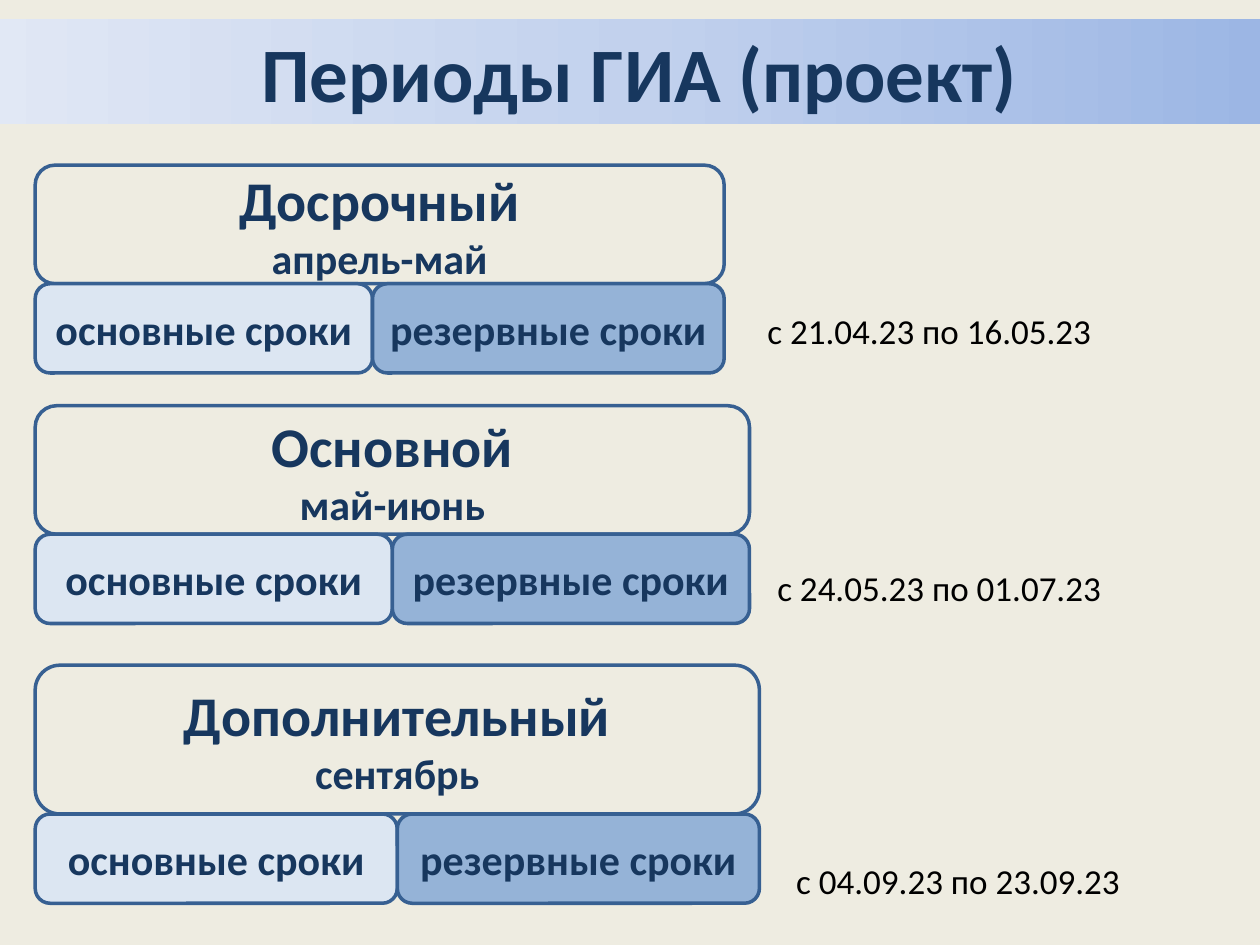
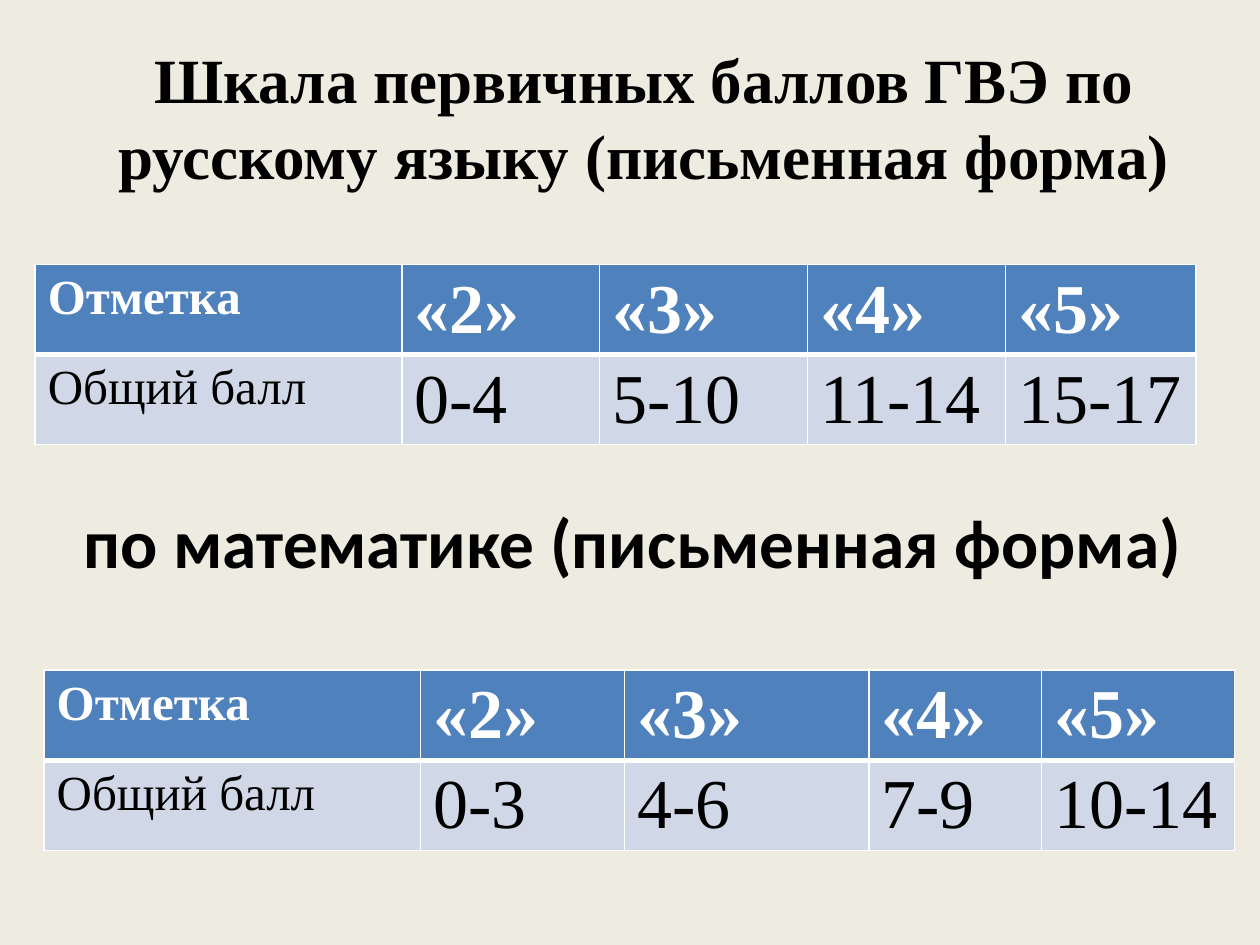
from copy import deepcopy

from lxml import etree
from pptx import Presentation
from pptx import util as u
from pptx.dml.color import RGBColor
from pptx.enum import shapes, text
from pptx.oxml.ns import qn

BACKGROUND = RGBColor(0xEE, 0xEC, 0xE1)
NAVY = RGBColor(0x17, 0x37, 0x5E)
OUTLINE = RGBColor(0x37, 0x60, 0x92)
PALE_BLUE = RGBColor(0xDC, 0xE6, 0xF2)
MID_BLUE = RGBColor(0x95, 0xB3, 0xD7)
HEADER_BLUE = RGBColor(0x4F, 0x81, 0xBD)
ROW_BLUE = RGBColor(0xD0, 0xD8, 0xE8)
WHITE = RGBColor(0xFF, 0xFF, 0xFF)
BLACK = RGBColor(0, 0, 0)
BAND_COLOURS = (RGBColor(0xE1, 0xE8, 0xF5), RGBColor(0xC2, 0xD1, 0xED),
                RGBColor(0x9A, 0xB5, 0xE4))

SANS = "Calibri"
SERIF = "Times New Roman"

TERM_HEIGHT = 1.8
ROW_HEIGHT = 1.8
PERIOD_LEFT = 0.71

# name, months, top, width, height, width of the main term, dates, dates' left and top
PERIODS = (
    ("Досрочный", "апрель-май", 3.33, 13.89, 2.39, 6.8,
     "с 21.04.23 по 16.05.23", 15.09, 6.12),
    ("Основной", "май-июнь", 8.18, 14.4, 2.59, 7.2,
     "с 24.05.23 по 01.07.23", 15.29, 11.3),
    ("Дополнительный", "сентябрь", 13.41, 14.6, 3, 7.3,
     "с 04.09.23 по 23.09.23", 15.67, 17.2),
)

MARKS = ("Отметка", "«2»", "«3»", "«4»", "«5»")
RUSSIAN_SCORES = ("Общий балл", "0-4", "5-10", "11-14", "15-17")
MATHS_SCORES = ("Общий балл", "0-3", "4-6", "7-9", "10-14")


def box(left, top, width, height):
    return [u.Cm(length) for length in (left, top, width, height)]


def write(paragraph, words, size, colour, font=SANS, bold=True, align=None):
    paragraph.alignment = align
    run = paragraph.add_run()
    run.text = words
    run.font.size = u.Pt(size)
    run.font.name = font
    run.font.bold = bold
    run.font.color.rgb = colour


def write_centred(frame, lines, colour, font=SANS):
    """Write (words, size) lines, one paragraph each, in the middle of a frame."""
    frame.word_wrap = True
    frame.auto_size = text.MSO_AUTO_SIZE.NONE
    frame.vertical_anchor = text.MSO_ANCHOR.MIDDLE
    for number, (words, size) in enumerate(lines):
        paragraph = frame.add_paragraph() if number else frame.paragraphs[0]
        write(paragraph, words, size, colour, font, align=text.PP_ALIGN.CENTER)


def add_titled_slide(deck, title_box, words, size, colour, font):
    slide = deck.slides.add_slide(deck.slide_layouts[5])
    title = slide.shapes.title
    title.left, title.top, title.width, title.height = box(*title_box)
    write_centred(title.text_frame, [(words, size)], colour, font)
    return slide


def fill_band(title):
    """Give the title a three-colour gradient from left to right."""
    title.fill.gradient()
    title.fill.gradient_angle = 0
    stop_list = title._element.spPr.find(".//" + qn("a:gsLst"))
    middle = deepcopy(stop_list[0])
    middle.set("pos", "50000")
    stop_list.insert(1, middle)
    for stop, colour in zip(title.fill.gradient_stops, BAND_COLOURS):
        stop.color.rgb = colour


def add_rounded_box(slide, place, lines, colour=None):
    rounded = slide.shapes.add_shape(
        shapes.MSO_SHAPE.ROUNDED_RECTANGLE, *box(*place))
    rounded.shadow.inherit = False
    if colour is None:
        rounded.fill.background()
    else:
        rounded.fill.solid()
        rounded.fill.fore_color.rgb = colour
    rounded.line.color.rgb = OUTLINE
    rounded.line.width = u.Pt(2)
    frame = rounded.text_frame
    frame.margin_left = frame.margin_right = u.Cm(0.1)
    write_centred(frame, lines, NAVY)


def add_dates(slide, left, top, words):
    frame = slide.shapes.add_textbox(*box(left, top, 10, 1.12)).text_frame
    frame.word_wrap = True
    frame.margin_left = u.Cm(0.38)
    write(frame.paragraphs[0], words, 20, BLACK, bold=False)


def add_period(slide, name, months, top, width, height, main_width,
               dates, dates_left, dates_top):
    add_rounded_box(slide, (PERIOD_LEFT, top, width, height),
                    [(name, 32), (months, 24)])
    terms_top = top + height
    add_rounded_box(slide, (PERIOD_LEFT, terms_top, main_width, TERM_HEIGHT),
                    [("основные сроки", 24)], PALE_BLUE)
    add_rounded_box(slide, (PERIOD_LEFT + main_width, terms_top,
                            width - main_width, TERM_HEIGHT),
                    [("резервные сроки", 24)], MID_BLUE)
    add_dates(slide, dates_left, dates_top, dates)


def set_borders(cell, **widths):
    """Draw white borders; widths in points are keyed L, R, T, B in that order."""
    properties = cell._tc.get_or_add_tcPr()
    for position, (side, width) in enumerate(widths.items()):
        line = etree.Element(qn("a:ln" + side), w=str(u.Pt(width)))
        solid = etree.SubElement(line, qn("a:solidFill"))
        etree.SubElement(solid, qn("a:srgbClr"), val=str(WHITE))
        properties.insert(position, line)


def add_score_table(slide, left, top, column_widths, scores):
    table = slide.shapes.add_table(
        2, len(MARKS), *box(left, top, sum(column_widths), 2 * ROW_HEIGHT)).table
    for column, width in zip(table.columns, column_widths):
        column.width = u.Cm(width)
    styles = ((MARKS, HEADER_BLUE, WHITE, True, 1, 3),
              (scores, ROW_BLUE, BLACK, False, 3, 1))
    for row, (words, fill, colour, bold, above, below) in enumerate(styles):
        table.rows[row].height = u.Cm(ROW_HEIGHT)
        for column, word in enumerate(words):
            cell = table.cell(row, column)
            cell.fill.solid()
            cell.fill.fore_color.rgb = fill
            set_borders(cell, L=1, R=1, T=above, B=below)
            write(cell.text_frame.paragraphs[0], word, 40 if column else 28,
                  colour, SERIF, bold)


def build_periods_slide(deck):
    slide = add_titled_slide(deck, (-0.3, 0.38, 26.39, 2.13),
                             "Периоды ГИА (проект)", 44, NAVY, SANS)
    fill_band(slide.shapes.title)
    for period in PERIODS:
        add_period(slide, *period)


def build_scores_slide(deck):
    slide = add_titled_slide(
        deck, (1.27, 0.76, 23.42, 3.18),
        "Шкала первичных баллов ГВЭ по русскому языку (письменная форма)",
        36, BLACK, SERIF)
    add_score_table(slide, 0.71, 5.33, (7.39, 3.99, 4.19, 3.99, 3.84),
                    RUSSIAN_SCORES)
    maths_heading = slide.shapes.add_textbox(*box(0.89, 9.32, 23.72, 3.18))
    write_centred(maths_heading.text_frame,
                  [("по математике (письменная форма)", 39.6)], BLACK)
    add_score_table(slide, 0.89, 13.51, (7.59, 4.11, 4.93, 3.48, 3.89),
                    MATHS_SCORES)


def main():
    deck = Presentation()
    deck.slide_width, deck.slide_height = u.Cm(25.4), u.Cm(19.05)
    background = deck.slide_master.background.fill
    background.solid()
    background.fore_color.rgb = BACKGROUND
    build_periods_slide(deck)
    build_scores_slide(deck)
    deck.save("out.pptx")


if __name__ == "__main__":
    main()
